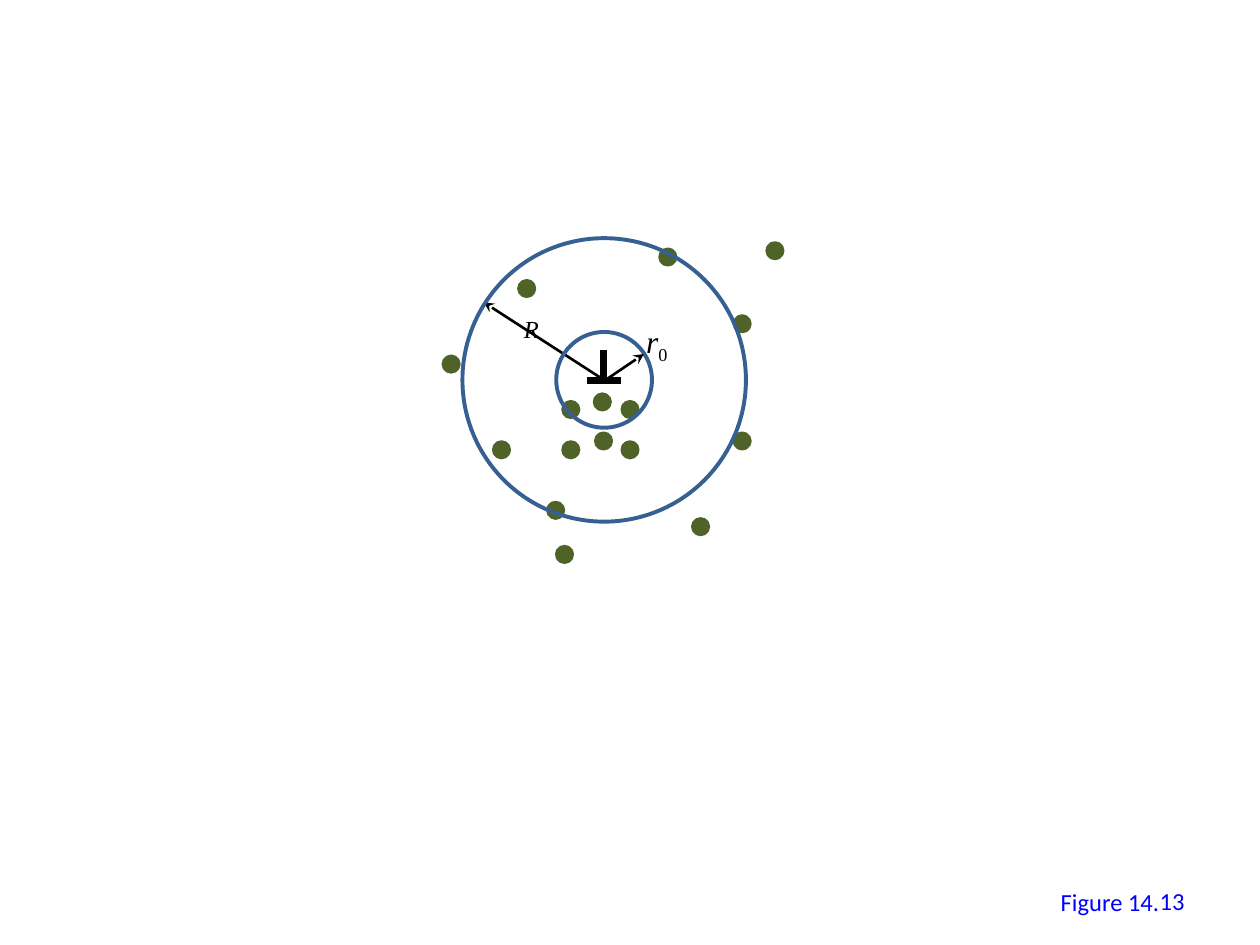
from lxml.etree import SubElement
from pptx import Presentation
from pptx.dml.color import RGBColor
from pptx.enum.shapes import MSO_CONNECTOR, MSO_SHAPE
from pptx.enum.text import MSO_ANCHOR, MSO_AUTO_SIZE, PP_ALIGN
from pptx.oxml.ns import qn
from pptx.util import Inches, Pt

BLACK = RGBColor(0x00, 0x00, 0x00)
BLUE = RGBColor(0x00, 0x00, 0xFF)
GREEN = RGBColor(0x4F, 0x62, 0x28)
RING_BLUE = RGBColor(0x37, 0x60, 0x92)

SERIF = "Times New Roman"
SANS = "Calibri"

CENTER = (4.795, 3.015)
RING_DIAMETERS = [0.76, 2.25]
DOT_SIZE = 0.12
ARROW_START = (4.8, 3.02)
OUTER_RADIUS_TIP = (3.84, 2.4)
INNER_RADIUS_TIP = (5.11, 2.81)
DISLOCATION_BARS = [((4.66, 3.02), (4.93, 3.02)), ((4.79, 3.02), (4.79, 2.78))]
SOLUTE_CORNERS = [
    (4.72, 3.13), (4.73, 3.44), (4.94, 3.19), (4.94, 3.51),
    (4.47, 3.19), (4.47, 3.51), (4.42, 4.34), (4.35, 3.99),
    (3.92, 3.51), (3.52, 2.83), (4.12, 2.23), (5.5, 4.12),
    (5.83, 3.44), (5.83, 2.51), (5.24, 1.98), (6.09, 1.93),
]


def add_line(shapes, start, end, width, arrow=False):
    line = shapes.add_connector(
        MSO_CONNECTOR.STRAIGHT, *[Inches(v) for v in (*start, *end)])
    line.line.color.rgb = BLACK
    line.line.width = Pt(width)
    if arrow:
        SubElement(line.line._get_or_add_ln(), qn("a:tailEnd"), type="stealth")
    SubElement(line._element.spPr, qn("a:effectLst"))


def add_circle(shapes, left, top, diameter, color, filled):
    circle = shapes.add_shape(
        MSO_SHAPE.OVAL, *[Inches(v) for v in (left, top, diameter, diameter)])
    circle.shadow.inherit = False
    if filled:
        circle.fill.solid()
        circle.fill.fore_color.rgb = color
    else:
        circle.fill.background()
    circle.line.color.rgb = color
    circle.line.width = Pt(2.25)


def add_label(shapes, box, text, size, font, color, italic=False):
    label = shapes.add_textbox(*[Inches(v) for v in box])
    frame = label.text_frame
    frame.word_wrap = False
    frame.auto_size = MSO_AUTO_SIZE.SHAPE_TO_FIT_TEXT
    add_run(frame.paragraphs[0], text, size, font, color, italic)
    return frame


def add_run(paragraph, text, size, font, color, italic=False):
    run = paragraph.add_run()
    run.text = text
    run.font.size = Pt(size)
    run.font.name = font
    run.font.color.rgb = color
    run.font.italic = italic
    return run


def main():
    deck = Presentation()
    deck.slide_width, deck.slide_height = Inches(10), Inches(7.5)
    slide = deck.slides.add_slide(deck.slide_layouts[6])
    shapes = slide.shapes

    add_label(shapes, (8.32, 6.99, 0.99, 0.34), "Figure 14.", 14, SANS, BLUE)

    add_line(shapes, ARROW_START, OUTER_RADIUS_TIP, 1.5, arrow=True)
    dislocation = shapes.add_group_shape()
    for start, end in DISLOCATION_BARS:
        add_line(dislocation.shapes, start, end, 4.5)
    for left, top in SOLUTE_CORNERS:
        add_circle(shapes, left, top, DOT_SIZE, GREEN, filled=True)
    for diameter in RING_DIAMETERS:
        left, top = [c - diameter / 2 for c in CENTER]
        add_circle(shapes, left, top, diameter, RING_BLUE, filled=False)
    add_line(shapes, ARROW_START, INNER_RADIUS_TIP, 1.5, arrow=True)

    inner_label = add_label(
        shapes, (5.03, 2.51, 0.45, 0.4), "r", 18, SERIF, BLACK, italic=True)
    subscript = add_run(inner_label.paragraphs[0], "0", 18, SERIF, BLACK)
    subscript.font._element.set("baseline", "-25000")
    add_label(shapes, (4.06, 2.44, 0.37, 0.34), "R", 14, SERIF, BLACK, italic=True)

    number = add_label(shapes, (7.17, 6.95, 2.33, 0.4), "13", 14, SANS, BLUE)
    number.word_wrap = True
    number.auto_size = MSO_AUTO_SIZE.NONE
    number.vertical_anchor = MSO_ANCHOR.MIDDLE
    number.paragraphs[0].alignment = PP_ALIGN.RIGHT

    deck.save("out.pptx")


if __name__ == "__main__":
    main()
